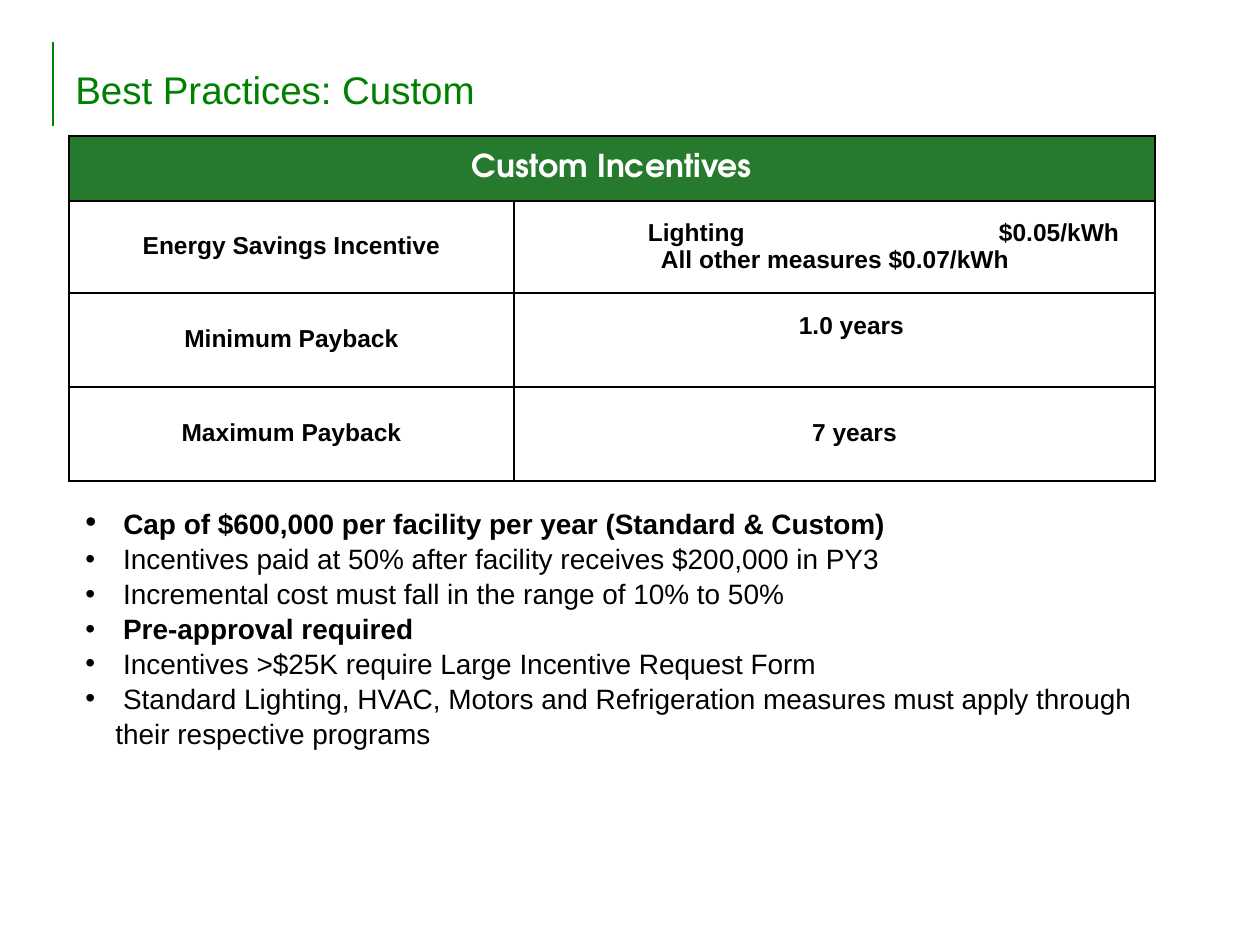
from pptx import Presentation
from pptx import util as u
from pptx.dml.color import RGBColor
from pptx.enum import shapes, text
from pptx.oxml.ns import qn
from lxml import etree

MID = text.MSO_ANCHOR.MIDDLE
LEFT, CENTER = text.PP_ALIGN.LEFT, text.PP_ALIGN.CENTER
GREEN, DARK, WHITE, BLACK = "008000", "257A2D", "FFFFFF", "000000"


def px(n):
    return round(n * 914400 / 126)


def color(code):
    return RGBColor.from_string(code)


def put(obj, **vals):
    """Set each named attribute of obj."""
    for key, val in vals.items():
        setattr(obj, key, val)


def add_run(para, words, size, ink=BLACK, bold=False, face="Arial"):
    run = para.add_run()
    run.text = words
    put(run.font, size=u.Pt(size), bold=bold, name=face)
    run.font.color.rgb = color(ink)


def sub(node, tag, **attrs):
    return etree.SubElement(node, qn(tag), {k: str(v) for k, v in attrs.items()})


def add_box(slide, box):
    frame = slide.shapes.add_textbox(*map(px, box)).text_frame
    frame.word_wrap = True
    return frame


def add_title(slide, box, words):
    """Title with a thin green rule to its left."""
    x, y, w, h = box
    rule = slide.shapes.add_connector(
        shapes.MSO_CONNECTOR.STRAIGHT, *map(px, (x - 10, y + 32, x - 10, y + 116)))
    rule.line.color.rgb = color(GREEN)
    rule.line.width = u.Pt(0.75)
    sub(rule._element.spPr, "a:effectLst")
    frame = add_box(slide, box)
    frame.vertical_anchor = MID
    add_run(frame.paragraphs[0], words, 22, GREEN)


def style_cell(cell, fill=None):
    """Black borders, small insets and a fill or none."""
    put(cell, margin_left=px(9), margin_right=px(9),
        margin_top=0, margin_bottom=0, vertical_anchor=MID)
    props = cell._tc.get_or_add_tcPr()
    for side in "LRTB":
        line = sub(props, f"a:ln{side}", w=u.Pt(1))
        sub(sub(line, "a:solidFill"), "a:srgbClr", val=BLACK)
    if fill:
        cell.fill.solid()
        cell.fill.fore_color.rgb = color(fill)
    else:
        cell.fill.background()


def fill_cell(cell, words, indent=0, align=CENTER, tab=None, first=True):
    frame = cell.text_frame
    para = frame.paragraphs[0] if first else frame.add_paragraph()
    put(para, alignment=align, line_spacing=0.96)
    props = para._p.get_or_add_pPr()
    props.set("marL", str(px(indent)))
    if tab:
        sub(sub(props, "a:tabLst"), "a:tab", pos=px(tab), algn="l")
    add_run(para, words, 14, bold=True)


def add_rates(slide, box, cols, rows):
    frame = slide.shapes.add_table(len(rows), len(cols), *map(px, box))
    table = frame.table
    put(table, first_row=False, horz_banding=False)
    for col, width in zip(table.columns, cols):
        col.width = px(width)
    for row, height in zip(table.rows, rows):
        row.height = px(height)
    for i, row in enumerate(table.rows):
        for cell in row.cells:
            style_cell(cell, None if i else DARK)

    head = table.cell(0, 0)
    head.merge(table.cell(0, 1))
    para = head.text_frame.paragraphs[0]
    para.alignment = CENTER
    add_run(para, "Custom Incentives", 18, WHITE, True, "TeX Gyre Adventor")

    labels = "Energy Savings Incentive", "Minimum Payback", "Maximum Payback"
    for i, label in enumerate(labels, 1):
        fill_cell(table.cell(i, 0), label)
    rate = table.cell(1, 1)
    fill_cell(rate, "Lighting\t$0.05/kWh", 125, LEFT, 351)
    fill_cell(rate, "All other measures $0.07/kWh", 138, LEFT, first=False)
    fill_cell(table.cell(2, 1), "1.0 years", 34)
    table.cell(2, 1).margin_bottom = px(27)
    fill_cell(table.cell(3, 1), "7 years", 40)


def add_notes(slide, box, items):
    """Bulleted list of (words, bold) items."""
    frame = add_box(slide, box)
    for i, (words, bold) in enumerate(items):
        para = frame.add_paragraph() if i else frame.paragraphs[0]
        para.line_spacing = 1.04
        props = para._p.get_or_add_pPr()
        put_indent = {"marL": px(30), "indent": px(-30)}
        for key, val in put_indent.items():
            props.set(key, str(val))
        sub(props, "a:buFont", typeface="Arial")
        sub(props, "a:buChar", char="•")
        if i:
            add_run(para, " ", 16)
        else:
            add_run(para, " ", 18, face="Times New Roman")
        add_run(para, words, 16, bold=bold)


def main():
    deck = Presentation()
    put(deck, slide_width=px(1260), slide_height=px(945))
    slide = deck.slides.add_slide(deck.slide_layouts[6])
    add_title(slide, (63, 10, 1197, 158), "Best Practices: Custom")
    add_rates(slide, (69, 136, 1086, 345), (445, 641), (65, 92, 94, 94))
    add_notes(slide, (73, 495, 1103, 320), [
        ("Cap of $600,000 per facility per year (Standard & Custom)", True),
        ("Incentives paid at 50% after facility receives $200,000 in PY3", False),
        ("Incremental cost must fall in the range of 10% to 50%", False),
        ("Pre-approval required", True),
        ("Incentives >$25K require Large Incentive Request Form", False),
        ("Standard Lighting, HVAC, Motors and Refrigeration measures "
         "must apply through their respective programs", False),
    ])
    deck.save("out.pptx")


if __name__ == "__main__":
    main()
